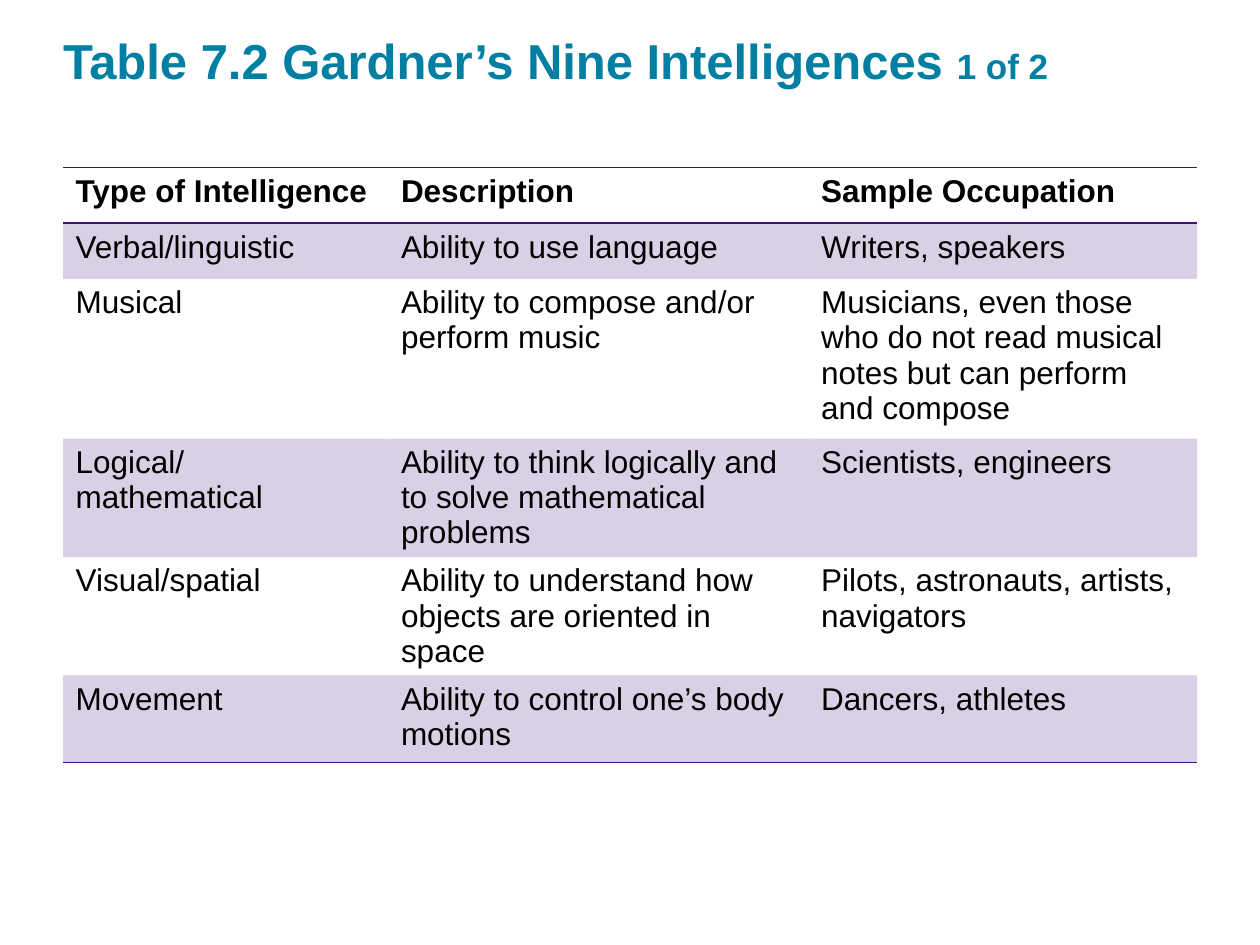
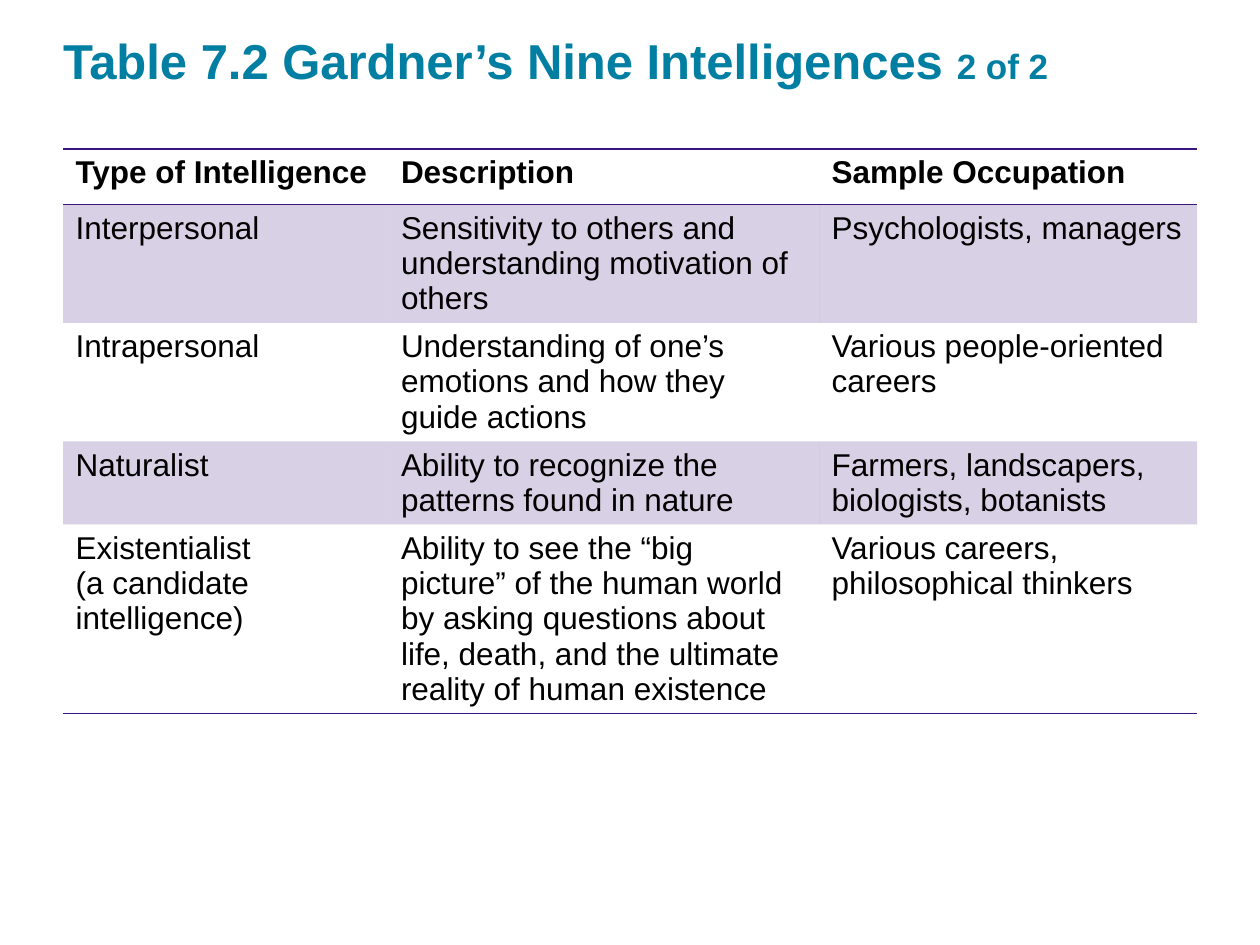
from lxml.etree import SubElement
from pptx import Presentation
from pptx.dml.color import RGBColor
from pptx.enum.text import MSO_ANCHOR, MSO_AUTO_SIZE, PP_ALIGN
from pptx.oxml.ns import qn
from pptx.util import Cm, Pt

COLORS = {"title": "007FA3", "text": "000000", "accent": "3C1581"}
FONT = "Arial"
LEFT = 1.27
TITLE = "Table 7.2 Gardner’s Nine Intelligences "
HEADER = ("Type of Intelligence", "Description", "Sample Occupation")
NO_STYLE = "{2D5ABB26-0587-4C30-8999-92F81FD0307C}"

# Each slide: part label, table top, column widths, row heights, body rows (cm)
SLIDES = [
    ("1 of 2", 3.38, (6.56, 8.47, 7.83), (1.12, 1.12, 3.22, 1.75, 1.75, 1.75), [
        ("Verbal/linguistic", "Ability to use language", "Writers, speakers"),
        ("Musical", "Ability to compose and/or perform music",
         "Musicians, even those who do not read musical notes but can perform and compose"),
        ("Logical/\vmathematical",
         "Ability to think logically and to solve mathematical problems",
         "Scientists, engineers"),
        ("Visual/spatial", "Ability to understand how objects are oriented in space",
         "Pilots, astronauts, artists, navigators"),
        ("Movement", "Ability to control one’s body motions", "Dancers, athletes"),
    ]),
    ("2 of 2", 3, (6.56, 8.68, 7.62), (1.12, 1.04, 1.04, 1.04, 1.04), [
        ("Interpersonal", "Sensitivity to others and understanding motivation of others",
         "Psychologists, managers"),
        ("Intrapersonal", "Understanding of one’s emotions and how they guide actions",
         "Various people-oriented careers"),
        ("Naturalist", "Ability to recognize the patterns found in nature",
         "Farmers, landscapers, biologists, botanists"),
        ("Existentialist\v(a candidate intelligence)",
         "Ability to see the “big picture” of the human world by asking questions "
         "about life, death, and the ultimate reality of human existence",
         "Various careers, philosophical thinkers"),
    ]),
]


class Deck:
    """Holds the shared style and the current slide."""

    def __init__(self):
        self.presentation = Presentation()
        self.presentation.slide_width = Cm(25.4)
        self.presentation.slide_height = Cm(19.05)
        self.slide = None

    def add_slide(self):
        layout = self.presentation.slide_layouts[5]  # Title Only
        self.slide = self.presentation.slides.add_slide(layout)

    def style(self, run, size, color, bold):
        run.font.name = FONT
        run.font.size = Pt(size)
        run.font.bold = bold
        run.font.color.rgb = RGBColor.from_string(COLORS[color])

    def title(self, text, part):
        shape = self.slide.shapes.title
        shape.left, shape.top, shape.width, shape.height = map(Cm, (LEFT, 0.61, 22.86, 2.31))
        frame = shape.text_frame
        frame.margin_left = frame.margin_top = frame.margin_right = frame.margin_bottom = 0
        frame.vertical_anchor = MSO_ANCHOR.TOP
        frame.auto_size = MSO_AUTO_SIZE.NONE
        frame.word_wrap = True
        paragraph = frame.paragraphs[0]
        paragraph.alignment = PP_ALIGN.LEFT
        for words, size in ((text, 28), (part, 20)):
            run = paragraph.add_run()
            run.text = words
            self.style(run, size, "title", True)

    def border(self, cell, side):
        line = SubElement(cell._tc.get_or_add_tcPr(), qn(f"a:{side}"), w=str(Pt(1)))
        fill = SubElement(line, qn("a:solidFill"))
        SubElement(fill, qn("a:srgbClr"), val=COLORS["accent"])

    def tint(self, cell):
        cell.fill.solid()
        cell.fill.fore_color.rgb = RGBColor.from_string(COLORS["accent"])
        color = cell._tc.tcPr.find(qn("a:solidFill")).find(qn("a:srgbClr"))
        SubElement(color, qn("a:alpha"), val="20000")

    def table(self, top, widths, heights, rows):
        frame = self.slide.shapes.add_table(
            len(rows), len(widths), Cm(LEFT), Cm(top), Cm(sum(widths)), Cm(sum(heights)))
        table = frame.table
        frame._element.find(".//" + qn("a:tableStyleId")).text = NO_STYLE
        table.horz_banding = False
        for column, width in zip(table.columns, widths):
            column.width = Cm(width)
        for index, (row, height, texts) in enumerate(zip(table.rows, heights, rows)):
            row.height = Cm(height)
            for cell, text in zip(row.cells, texts):
                cell.text_frame.text = text
                for run in cell.text_frame.paragraphs[0].runs:
                    self.style(run, 18, "text", index == 0)
                # Rules around the header and below the last row
                if index == 0:
                    self.border(cell, "lnT")
                if index in (0, len(rows) - 1):
                    self.border(cell, "lnB")
                # Odd rows are tinted
                if index % 2:
                    self.tint(cell)
                else:
                    cell.fill.background()


def main():
    deck = Deck()
    for part, top, widths, heights, rows in SLIDES:
        deck.add_slide()
        deck.title(TITLE, part)
        deck.table(top, widths, heights, [HEADER, *rows])
    deck.presentation.save("out.pptx")


if __name__ == "__main__":
    main()
